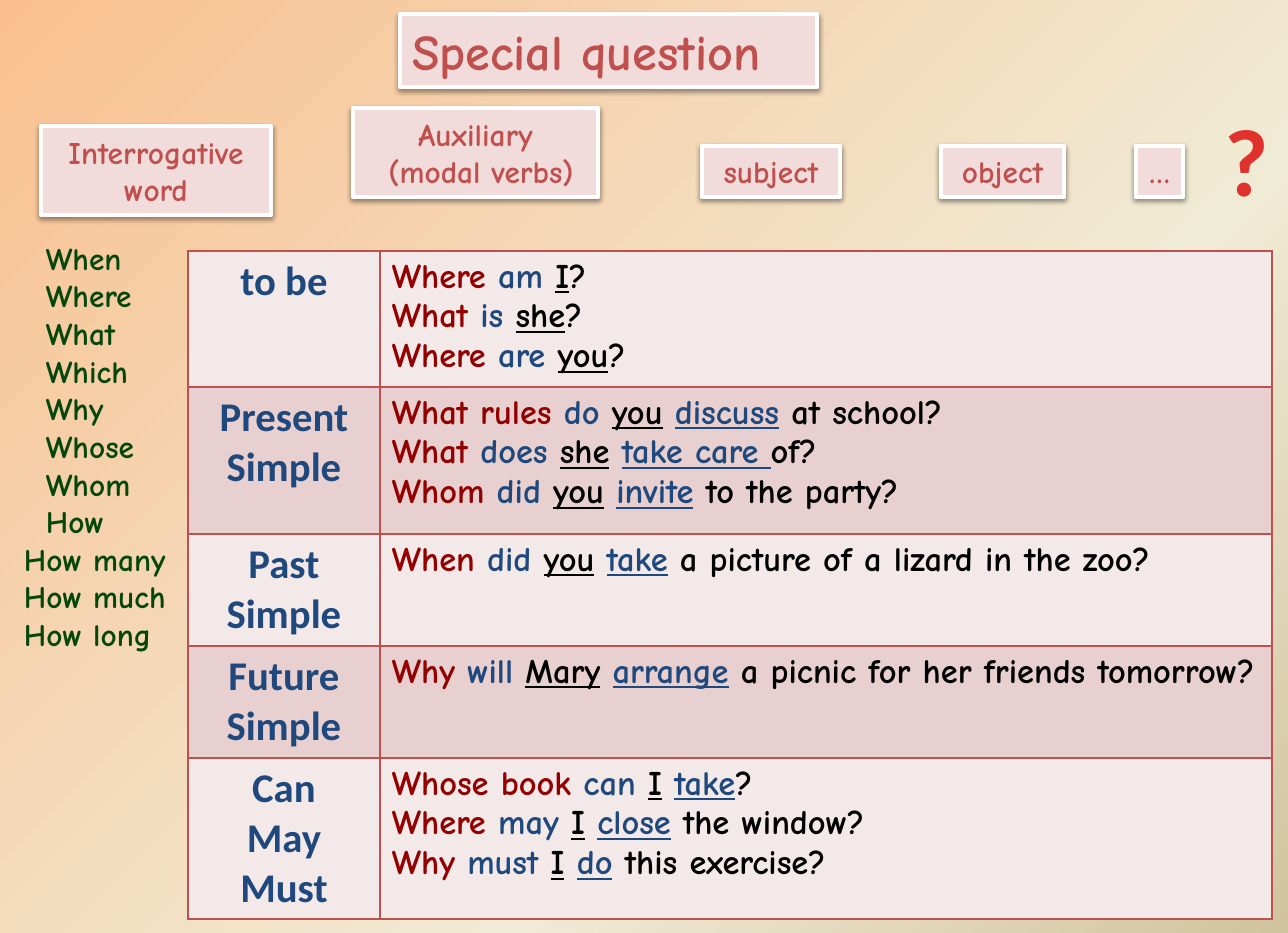
from pptx import Presentation
from pptx.dml.color import RGBColor
from pptx.enum.shapes import MSO_SHAPE
from pptx.enum.text import PP_ALIGN
from pptx.oxml import parse_xml
from pptx.oxml.ns import nsdecls
from pptx.util import Pt

PX = 8106
COLORS = {
    "peach": "FAC090", "cream": "F0EBD5", "khaki": "D1C39F",
    "pink": "F2DCDB", "white": "FFFFFF", "red": "C0504D", "mark": "E0322D",
    "green": "05470B", "navy": "1F497D", "maroon": "920000", "black": "000000",
    "light row": "F4E9E9", "dark row": "E8D0D0",
}
COMIC = "Comic Neue"


def color(name):
    return RGBColor.from_string(COLORS[name])


def write_lines(frame, lines, size, font, color_name, align=PP_ALIGN.CENTER):
    frame.margin_left = frame.margin_right = 12 * PX
    frame.margin_top = frame.margin_bottom = 6 * PX
    for index, line in enumerate(lines):
        para = frame.paragraphs[0] if index == 0 else frame.add_paragraph()
        para.text = line
        para.alignment = align
        para.font.size = Pt(size)
        para.font.name = font
        para.font.bold = True
        para.font.color.rgb = color(color_name)


deck = Presentation()
deck.slide_width = 1288 * PX
deck.slide_height = 933 * PX
page = deck.slides.add_slide(deck.slide_layouts[6])

stops = "".join(
    f'<a:gs pos="{place * 1000}"><a:srgbClr val="{COLORS[name]}"/></a:gs>'
    for place, name in [(0, "peach"), (65, "cream"), (100, "khaki")])
page.element.cSld.insert(0, parse_xml(
    f'<p:bg {nsdecls("p", "a")}><p:bgPr><a:gradFill rotWithShape="1">'
    f'<a:gsLst>{stops}</a:gsLst><a:lin ang="2700000" scaled="0"/>'
    '</a:gradFill><a:effectLst/></p:bgPr></p:bg>'))

labels = [
    (400, 14, 417, 73, ["Special question"], 32, PP_ALIGN.LEFT),
    (41, 126, 230, 89, ["Interrogative", "word"], 20, PP_ALIGN.CENTER),
    (353, 108, 245, 89, ["Auxiliary", " (modal verbs)"], 20, PP_ALIGN.CENTER),
    (702, 146, 138, 51, ["subject"], 20, PP_ALIGN.CENTER),
    (941, 146, 123, 51, ["object"], 20, PP_ALIGN.CENTER),
    (1136, 146, 47, 51, ["…"], 20, PP_ALIGN.CENTER),
]
for left, top, width, height, lines, size, align in labels:
    box = page.shapes.add_shape(
        MSO_SHAPE.RECTANGLE, left * PX, top * PX, width * PX, height * PX)
    box.fill.solid()
    box.fill.fore_color.rgb = color("pink")
    box.line.color.rgb = color("white")
    box.line.width = Pt(3)
    box.shadow.inherit = False
    box.element.spPr.effectLst.append(parse_xml(
        f'<a:outerShdw {nsdecls("a")} blurRad="40000" dist="20000" dir="5400000" '
        'rotWithShape="0"><a:srgbClr val="000000"><a:alpha val="38000"/>'
        '</a:srgbClr></a:outerShdw>'))
    box.text_frame.word_wrap = align == PP_ALIGN.LEFT
    write_lines(box.text_frame, lines, size, COMIC, "red", align)

mark = page.shapes.add_textbox(1211 * PX, 95 * PX, 71 * PX, 129 * PX)
mark.text_frame.word_wrap = False
write_lines(mark.text_frame, ["?"], 61, "Calibri", "mark")

question_words = ["When", "Where", "What", "Which", "Why", "Whose", "Whom",
                  "How", "How many", "How much", "How long"]
word_list = page.shapes.add_textbox(12 * PX, 233 * PX, 206 * PX, 428 * PX)
word_list.text_frame.word_wrap = True
write_lines(word_list.text_frame, question_words, 20, COMIC, "green", PP_ALIGN.LEFT)
for para in word_list.text_frame.paragraphs:
    if " " not in para.text:
        para._p.get_or_add_pPr().set("marL", str(22 * PX))

tenses = [
    (136, ["to be"], [
        ("Where ", "am ", "I", "", "?"),
        ("What ", "is ", "she", "", "?"),
        ("Where ", "are ", "you", "", "?")]),
    (147, ["Present Simple"], [
        ("What rules ", "do ", "you", "discuss", " at school?"),
        ("What ", "does ", "she", "take care ", "of?"),
        ("Whom ", "did ", "you", "invite", " to the party?")]),
    (112, ["Past Simple"], [
        ("When ", "did ", "you", "take", " a picture of a lizard in the zoo?")]),
    (112, ["Future Simple"], [
        ("Why ", "will ", "Mary", "arrange", " a picnic for her friends tomorrow?")]),
    (161, ["Can", "May", "Must"], [
        ("Whose book ", "can ", "I", "take", "?"),
        ("Where ", "may ", "I", "close", " the window?"),
        ("Why ", "must ", "I", "do", " this exercise?")]),
]
table_height = sum(height for height, *_ in tenses)
table = page.shapes.add_table(
    len(tenses), 2, 188 * PX, 251 * PX, 1084 * PX, table_height * PX).table
table.first_row = False
table.horz_banding = False
table.columns[0].width = 192 * PX
table.columns[1].width = 892 * PX

for row, (height, names, questions) in enumerate(tenses):
    table.rows[row].height = height * PX
    name_cell, question_cell = table.cell(row, 0), table.cell(row, 1)
    for cell in (name_cell, question_cell):
        cell.fill.solid()
        cell.fill.fore_color.rgb = color("dark row" if row % 2 else "light row")
        for index, side in enumerate(["lnL", "lnR", "lnT", "lnB"]):
            cell._tc.get_or_add_tcPr().insert(index, parse_xml(
                f'<a:{side} {nsdecls("a")} w="12700"><a:solidFill>'
                f'<a:srgbClr val="{COLORS["red"]}"/></a:solidFill></a:{side}>'))
        cell.margin_left = cell.margin_right = 12 * PX
        cell.margin_top = cell.margin_bottom = 6 * PX
    write_lines(name_cell.text_frame, names, 26, "Calibri", "navy")
    write_lines(question_cell.text_frame, [""] * len(questions), 22, COMIC,
                "black", PP_ALIGN.LEFT)
    for para, question in zip(question_cell.text_frame.paragraphs, questions):
        asking, auxiliary, subject, verb, rest = question
        spans = [(asking, "maroon", False), (auxiliary, "navy", False),
                 (subject, "black", True), (" " if verb else "", "black", False),
                 (verb, "navy", True), (rest, "black", False)]
        for text, color_name, underlined in spans:
            if text:
                span = para.add_run()
                span.text = text
                span.font.color.rgb = color(color_name)
                span.font.underline = underlined

deck.save("out.pptx")
